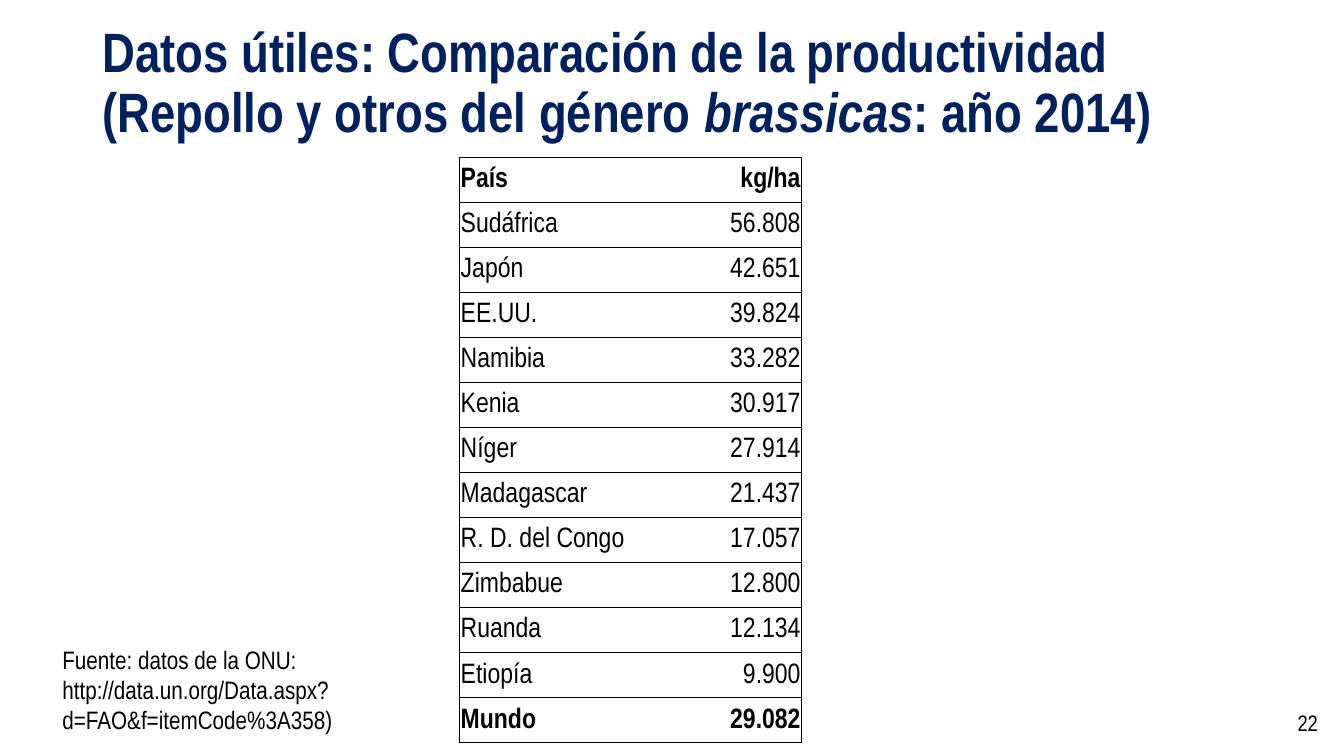
"""Builds a slide comparing cabbage yields by country."""
from dataclasses import dataclass

from lxml import etree
from pptx import Presentation
from pptx.dml.color import RGBColor
from pptx.enum.text import MSO_ANCHOR, PP_ALIGN
from pptx.oxml.ns import qn
from pptx.util import Emu, Pt

EMU_PER_PX = 9144
FONT = "Arial Narrow"
NAVY, BLACK, WHITE = "002060", "000000", "FFFFFF"
LEFT, RIGHT = PP_ALIGN.LEFT, PP_ALIGN.RIGHT
TOP, MIDDLE = MSO_ANCHOR.TOP, MSO_ANCHOR.MIDDLE
TABLE_LEFT, TABLE_TOP = 456, 156
COLUMN_WIDTHS = (191, 148)
COLUMN_ALIGNMENTS = (LEFT, RIGHT)
COLUMN_BORDERS = (("lnL", "lnT", "lnB"), ("lnR", "lnT", "lnB"))
TABLE_HEIGHT = 581
BORDER_WIDTH = 12700


@dataclass(frozen=True)
class Run:
    text: str
    italic: bool = False


@dataclass(frozen=True)
class TextBlock:
    left: int
    top: int
    width: int
    height: int
    lines: tuple[tuple[Run, ...], ...]
    size: float
    color: str = BLACK
    bold: bool = False
    alignment: PP_ALIGN = LEFT
    anchor: MSO_ANCHOR = MIDDLE
    line_spacing: float = 1.0


@dataclass(frozen=True)
class Yield:
    country: str
    amount: str
    bold: bool = False


TEXT_BLOCKS = (
    TextBlock(
        92, 11, 1150, 145,
        (
            (Run("Datos útiles: Comparación de la productividad"),),
            (Run("(Repollo y otros del género "), Run("brassicas", italic=True), Run(": año 2014)")),
        ),
        39.6, NAVY, bold=True, line_spacing=0.9,
    ),
    TextBlock(1017, 697, 300, 40, ((Run("22"),),), 16, alignment=RIGHT),
    TextBlock(
        52, 634, 370, 101,
        ((Run("Fuente: datos de la ONU: http://data.un.org/Data.aspx?d=FAO&f=itemCode%3A358)"),),),
        18, anchor=TOP,
    ),
)

YIELDS = (
    Yield("País", "kg/ha", bold=True),
    Yield("Sudáfrica", "56.808"),
    Yield("Japón", "42.651"),
    Yield("EE.UU.", "39.824"),
    Yield("Namibia", "33.282"),
    Yield("Kenia", "30.917"),
    Yield("Níger", "27.914"),
    Yield("Madagascar", "21.437"),
    Yield("R. D. del Congo", "17.057"),
    Yield("Zimbabue", "12.800"),
    Yield("Ruanda", "12.134"),
    Yield("Etiopía", "9.900"),
    Yield("Mundo", "29.082", bold=True),
)


def px(length: int) -> Emu:
    return Emu(length * EMU_PER_PX)


def rgb(color: str) -> RGBColor:
    return RGBColor.from_string(color)


def style_paragraph(paragraph, size: float, color: str, bold: bool, alignment: PP_ALIGN) -> None:
    paragraph.alignment = alignment
    paragraph.font.name = FONT
    paragraph.font.size = Pt(size)
    paragraph.font.bold = bold
    paragraph.font.color.rgb = rgb(color)


def add_text(slide, block: TextBlock) -> None:
    shape = slide.shapes.add_textbox(px(block.left), px(block.top), px(block.width), px(block.height))
    frame = shape.text_frame
    frame.word_wrap = True
    frame.vertical_anchor = block.anchor
    paragraph = frame.paragraphs[0]
    style_paragraph(paragraph, block.size, block.color, block.bold, block.alignment)
    paragraph.line_spacing = block.line_spacing
    for index, line in enumerate(block.lines):
        if index:
            paragraph.add_line_break()
        for part in line:
            run = paragraph.add_run()
            run.text = part.text
            if part.italic:
                run.font.italic = True


def set_borders(cell, visible: tuple[str, ...]) -> None:
    properties = cell._tc.get_or_add_tcPr()
    for index, side in enumerate(("lnL", "lnR", "lnT", "lnB")):
        line = etree.Element(qn(f"a:{side}"), w=str(BORDER_WIDTH))
        if side in visible:
            fill = etree.SubElement(line, qn("a:solidFill"))
            etree.SubElement(fill, qn("a:srgbClr"), val=BLACK)
        else:
            etree.SubElement(line, qn("a:noFill"))
        properties.insert(index, line)


def fill_cell(cell, text: str, bold: bool, alignment: PP_ALIGN, borders: tuple[str, ...]) -> None:
    cell.text = text
    cell.vertical_anchor = MIDDLE
    cell.margin_left = cell.margin_right = cell.margin_top = px(1)
    cell.margin_bottom = px(0)
    cell.fill.solid()
    cell.fill.fore_color.rgb = rgb(WHITE)
    style_paragraph(cell.text_frame.paragraphs[0], 20, BLACK, bold, alignment)
    set_borders(cell, borders)


def add_yield_table(slide) -> None:
    table = slide.shapes.add_table(
        len(YIELDS), len(COLUMN_WIDTHS),
        px(TABLE_LEFT), px(TABLE_TOP), px(sum(COLUMN_WIDTHS)), px(TABLE_HEIGHT),
    ).table
    table.first_row = False
    table.horz_banding = False
    for column, width in zip(table.columns, COLUMN_WIDTHS):
        column.width = px(width)
    for row, entry in zip(table.rows, YIELDS):
        texts = (entry.country, entry.amount)
        for cell, text, alignment, borders in zip(row.cells, texts, COLUMN_ALIGNMENTS, COLUMN_BORDERS):
            fill_cell(cell, text, entry.bold, alignment, borders)


def main() -> None:
    presentation = Presentation()
    presentation.slide_width = px(1333)
    presentation.slide_height = px(750)
    slide = presentation.slides.add_slide(presentation.slide_layouts[6])
    add_yield_table(slide)
    for block in TEXT_BLOCKS:
        add_text(slide, block)
    presentation.save("out.pptx")


if __name__ == "__main__":
    main()
